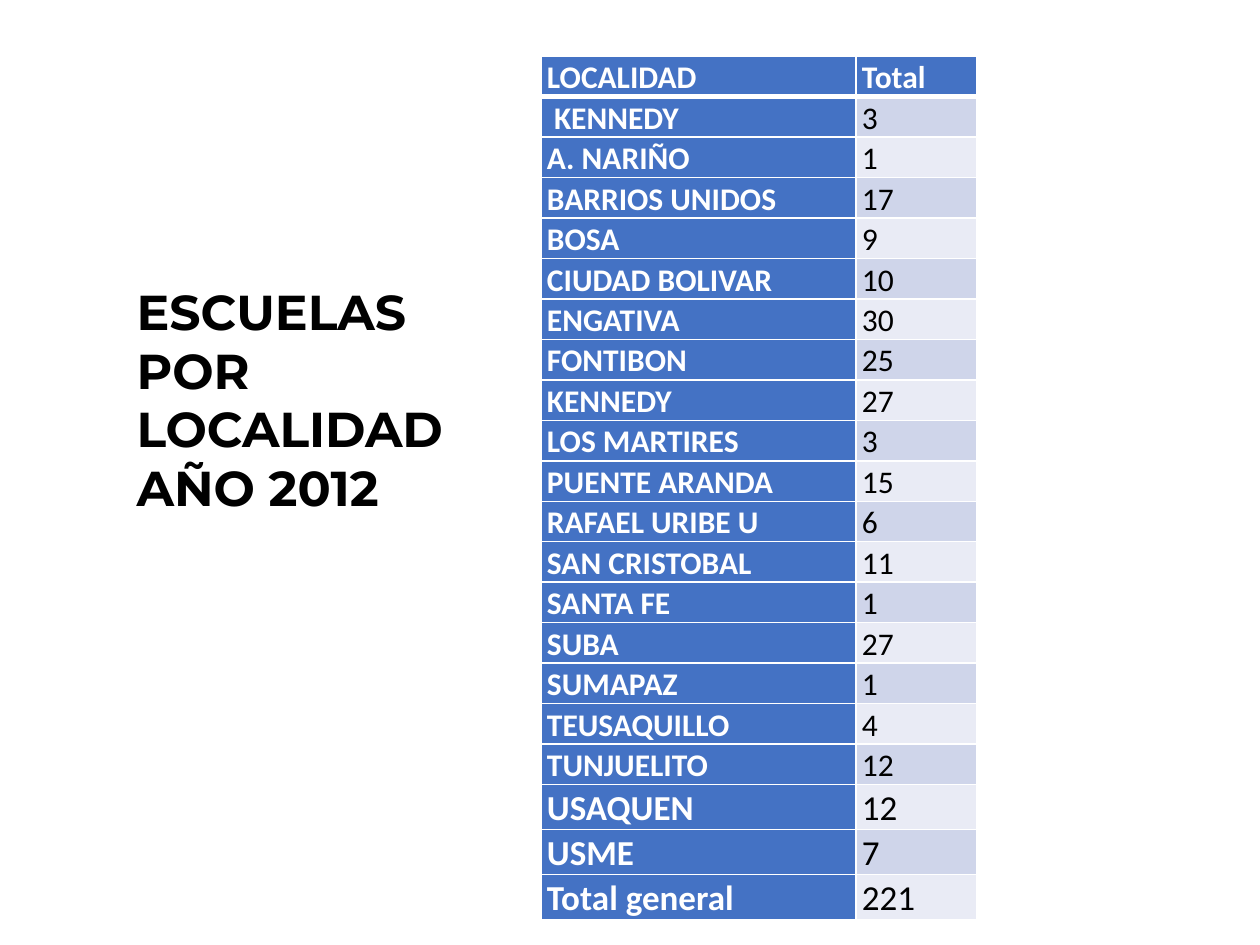
from lxml import etree
from pptx import Presentation
from pptx.dml.color import RGBColor
from pptx.enum.text import MSO_ANCHOR, MSO_AUTO_SIZE, PP_ALIGN
from pptx.oxml.ns import qn
from pptx.util import Emu, Pt

PX = 914400 // 126
BLACK = RGBColor(0x00, 0x00, 0x00)
WHITE = RGBColor(0xFF, 0xFF, 0xFF)
BLUE = RGBColor(0x44, 0x72, 0xC4)
BANDS = (RGBColor(0xE9, 0xEB, 0xF5), RGBColor(0xCF, 0xD5, 0xEA))
BOTTOM, TOP = MSO_ANCHOR.BOTTOM, MSO_ANCHOR.TOP
LEFT, JUSTIFY = PP_ALIGN.LEFT, PP_ALIGN.JUSTIFY
FIT_SHAPE = MSO_AUTO_SIZE.SHAPE_TO_FIT_TEXT

COL_WIDTHS = (315, 121)
ROW_HEIGHT = 29
LARGE_ROWS = 3
ROWS = [
    ("LOCALIDAD", "Total"),
    (" KENNEDY", "3"),
    ("A. NARIÑO", "1"),
    ("BARRIOS UNIDOS", "17"),
    ("BOSA", "9"),
    ("CIUDAD BOLIVAR", "10"),
    ("ENGATIVA", "30"),
    ("FONTIBON", "25"),
    ("KENNEDY", "27"),
    ("LOS MARTIRES", "3"),
    ("PUENTE ARANDA", "15"),
    ("RAFAEL URIBE U", "6"),
    ("SAN CRISTOBAL", "11"),
    ("SANTA FE", "1"),
    ("SUBA", "27"),
    ("SUMAPAZ", "1"),
    ("TEUSAQUILLO", "4"),
    ("TUNJUELITO", "12"),
    ("USAQUEN", "12"),
    ("USME", "7"),
    ("Total general", "221"),
]


def px(n):
    return Emu(n * PX)


def set_font(p, name, size, color, bold):
    p.font.name = name
    p.font.size = Pt(size)
    p.font.color.rgb = color
    p.font.bold = bold


def set_borders(cell, top, bottom):
    tcPr = cell._tc.get_or_add_tcPr()
    widths = (("a:lnL", 1), ("a:lnR", 1), ("a:lnT", top), ("a:lnB", bottom))
    for i, (tag, width) in enumerate(widths):
        ln = etree.Element(qn(tag), w=str(Pt(width)))
        fill = etree.SubElement(ln, qn("a:solidFill"))
        etree.SubElement(fill, qn("a:srgbClr"), val=str(WHITE))
        tcPr.insert(i, ln)


def add_title(s, x, y, w, h):
    sp = s.shapes.title
    sp.left, sp.top, sp.width, sp.height = px(x), px(y), px(w), px(h)
    tf = sp.text_frame
    tf.word_wrap = True
    tf.auto_size = FIT_SHAPE
    tf.vertical_anchor = TOP
    tf.text = "ESCUELAS POR LOCALIDAD AÑO 2012"
    p = tf.paragraphs[0]
    p.alignment = LEFT
    set_font(p, "Montserrat", 28, BLACK, True)


def fill_cell(cell, text, row, col):
    heading = row == 0 or col == 0
    cell.margin_left = cell.margin_right = px(6)
    cell.margin_top = cell.margin_bottom = 0
    cell.vertical_anchor = BOTTOM
    cell.fill.solid()
    cell.fill.fore_color.rgb = BLUE if heading else BANDS[row % 2]
    set_borders(cell, 3 if row == 1 else 1, 3 if row == 0 else 1)
    cell.text = text
    p = cell.text_frame.paragraphs[0]
    p.alignment = JUSTIFY
    p.line_spacing = 1.07
    size = 20 if row >= len(ROWS) - LARGE_ROWS else 18
    set_font(p, "Calibri", size, WHITE if heading else BLACK, heading)


def add_school_table(s, x, y, h):
    frame = s.shapes.add_table(len(ROWS), len(COL_WIDTHS), px(x), px(y), px(sum(COL_WIDTHS)), px(h))
    table = frame.table
    for column, width in zip(table.columns, COL_WIDTHS):
        column.width = px(width)
    for row, texts in enumerate(ROWS):
        table.rows[row].height = px(ROW_HEIGHT)
        for col, text in enumerate(texts):
            fill_cell(table.cell(row, col), text, row, col)
    frame.height = px(h)


def main():
    prs = Presentation()
    prs.slide_width, prs.slide_height = px(1260), px(945)
    s = prs.slides.add_slide(prs.slide_layouts[5])
    add_school_table(s, 541, 56, 863)
    add_title(s, 124, 275, 348, 251)
    prs.save("out.pptx")


if __name__ == "__main__":
    main()
